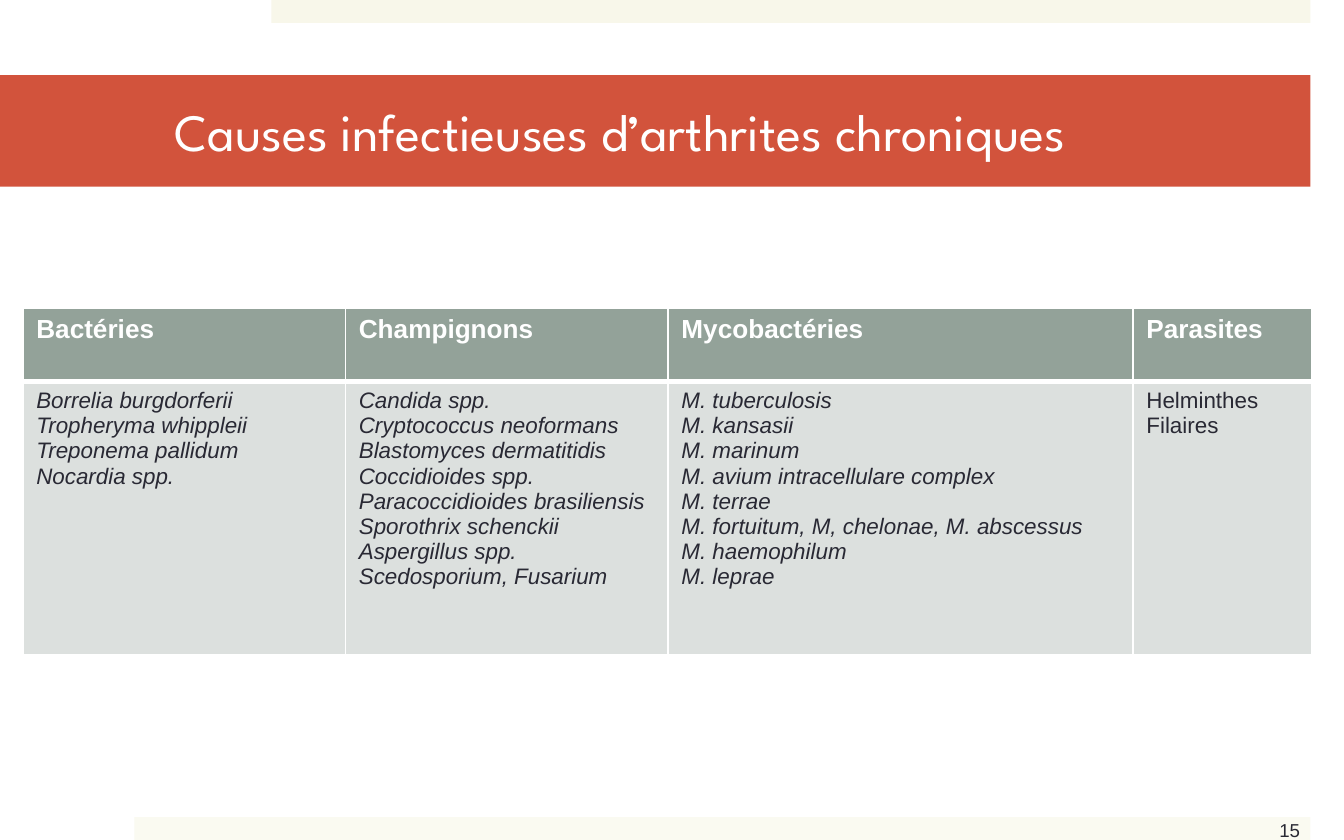
"""Build a slide with a table of infectious causes of chronic arthritis."""
from lxml import etree
from pptx import Presentation
from pptx.dml.color import RGBColor
from pptx.enum.shapes import MSO_SHAPE
from pptx.enum.text import MSO_ANCHOR, PP_ALIGN
from pptx.oxml.ns import qn
from pptx.util import Inches, Pt

RECTANGLE = MSO_SHAPE.RECTANGLE
MIDDLE = MSO_ANCHOR.MIDDLE
LEFT = PP_ALIGN.LEFT

COLORS = {
    "white": "FFFFFF",
    "ink": "292934",
    "title": "D2533C",
    "top_band": "F8F7EA",
    "bottom_band": "FAFAF1",
    "header": "93A299",
    "body": "DCE0DE",
}
CAUSES = {
    "Bactéries": [
        "Borrelia burgdorferii", "Tropheryma whippleii",
        "Treponema pallidum", "Nocardia spp.",
    ],
    "Champignons": [
        "Candida spp.", "Cryptococcus neoformans", "Blastomyces dermatitidis",
        "Coccidioides spp.", "Paracoccidioides brasiliensis",
        "Sporothrix schenckii", "Aspergillus spp.", "Scedosporium, Fusarium",
    ],
    "Mycobactéries": [
        "M. tuberculosis", "M. kansasii", "M. marinum",
        "M. avium intracellulare complex", "M. terrae",
        "M. fortuitum, M, chelonae, M. abscessus", "M. haemophilum", "M. leprae",
    ],
    "Parasites": ["Helminthes", "Filaires"],
}
COLUMN_WIDTHS = [2.4, 2.4, 3.46, 1.33]
ROW_HEIGHTS = [0.55, 2.03]


def format_text(text_frame, size, color, font="Arial", bold=False, italic=False):
    for paragraph in text_frame.paragraphs:
        paragraph.alignment = LEFT
        for run in paragraph.runs:
            run.font.name = font
            run.font.size = Pt(size)
            run.font.bold = bold
            run.font.italic = italic
            run.font.color.rgb = RGBColor.from_string(COLORS[color])


def style_cell(cell, fill, border_widths):
    properties = cell._tc.get_or_add_tcPr()
    for side, width in border_widths.items():
        line = etree.SubElement(properties, qn(f"a:{side}"), w=str(Pt(width)))
        solid = etree.SubElement(line, qn("a:solidFill"))
        etree.SubElement(solid, qn("a:srgbClr"), val=COLORS["white"])
    cell.fill.solid()
    cell.fill.fore_color.rgb = RGBColor.from_string(COLORS[fill])


presentation = Presentation()
presentation.slide_width = Inches(10)
presentation.slide_height = Inches(6.25)
slide = presentation.slides.add_slide(presentation.slide_layouts[6])

bands = {}
for name, left, top, width, height in [
    ("top_band", 2.02, 0, 7.73, 0.17),
    ("bottom_band", 1, 6.08, 8.75, 0.17),
    ("title", 0, 0.56, 9.75, 0.83),
]:
    band = slide.shapes.add_shape(
        RECTANGLE, Inches(left), Inches(top), Inches(width), Inches(height)
    )
    band.shadow.inherit = False
    band.fill.solid()
    band.fill.fore_color.rgb = RGBColor.from_string(COLORS[name])
    band.line.fill.background()
    bands[name] = band

title_frame = bands["title"].text_frame
title_frame.text = "Causes infectieuses d’arthrites chroniques"
title_frame.word_wrap = True
title_frame.vertical_anchor = MIDDLE
title_frame.margin_left = Inches(1.3)
title_frame.margin_right = Inches(0.3)
format_text(title_frame, 28, "white", font="League Spartan")

page_number = slide.shapes.add_textbox(
    Inches(9.42), Inches(6.04), Inches(0.41), Inches(0.28)
)
page_number.text_frame.text = "15"
page_number.text_frame.word_wrap = True
format_text(page_number.text_frame, 10, "ink")

table = slide.shapes.add_table(
    len(ROW_HEIGHTS), len(CAUSES), Inches(0.17), Inches(2.29),
    Inches(sum(COLUMN_WIDTHS)), Inches(sum(ROW_HEIGHTS)),
).table
for row, height in zip(table.rows, ROW_HEIGHTS):
    row.height = Inches(height)
for column, width in zip(table.columns, COLUMN_WIDTHS):
    column.width = Inches(width)

for index, (category, organisms) in enumerate(CAUSES.items()):
    header = table.cell(0, index)
    header.text_frame.text = category
    format_text(header.text_frame, 14, "white", bold=True)
    style_cell(header, "header", {"lnL": 1, "lnR": 1, "lnT": 1, "lnB": 3})

    body = table.cell(1, index)
    body.text_frame.text = "\n".join(organisms)
    format_text(body.text_frame, 12, "ink", italic=category != "Parasites")
    style_cell(body, "body", {"lnL": 1, "lnR": 1, "lnT": 3, "lnB": 1})

presentation.save("out.pptx")
